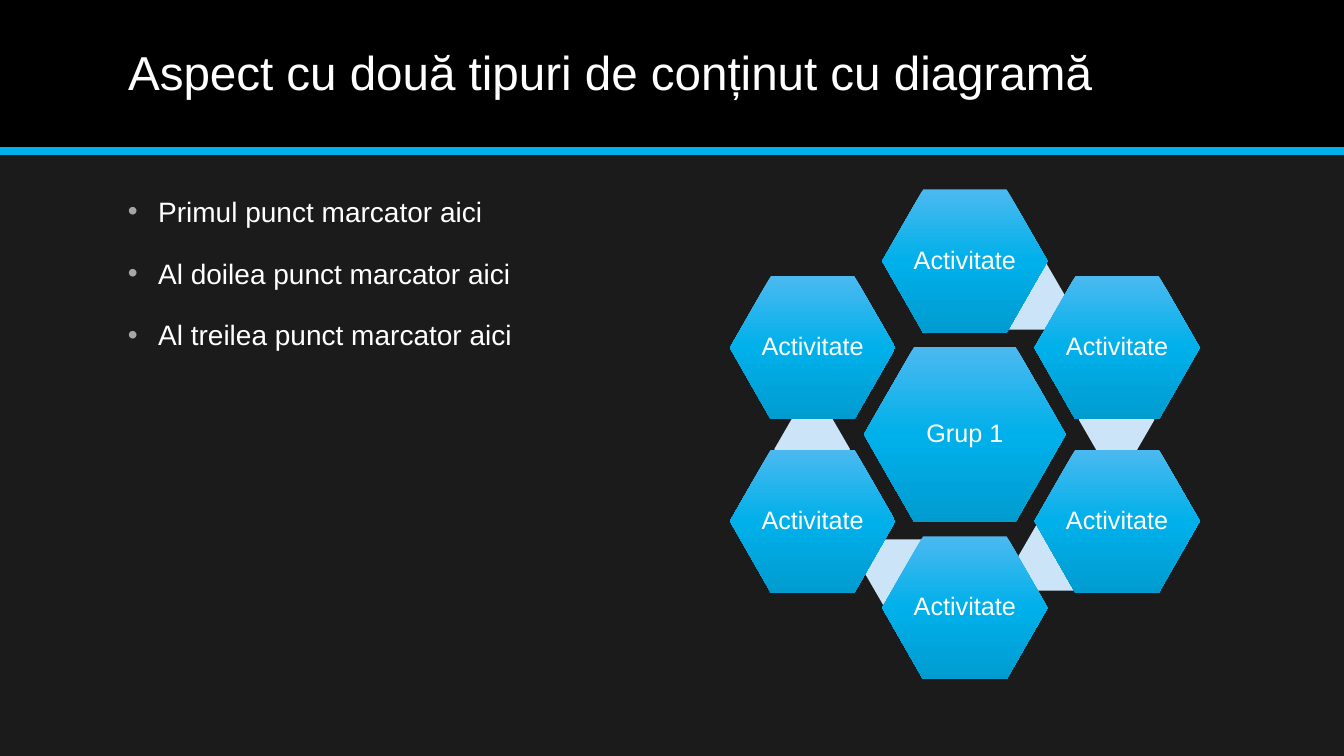
from copy import deepcopy

from lxml import etree
from pptx import Presentation
from pptx.dml.color import RGBColor
from pptx.enum.shapes import MSO_CONNECTOR, MSO_SHAPE
from pptx.enum.text import MSO_ANCHOR, PP_ALIGN
from pptx.oxml.ns import qn
from pptx.util import Inches, Pt

RECT, HEXAGON = MSO_SHAPE.RECTANGLE, MSO_SHAPE.HEXAGON
STRAIGHT = MSO_CONNECTOR.STRAIGHT
MIDDLE, LEFT, CENTER = MSO_ANCHOR.MIDDLE, PP_ALIGN.LEFT, PP_ALIGN.CENTER

FONT = "Arial"
COLORS = {
    "back": "1B1B1B", "band": "000000", "rule": "00B0EA", "text": "FFFFFF",
    "bullet": "A6A6A6", "link": "CCE4F7",
    "top": "4BB9F0", "mid": "00B0EA", "low": "009CD0",
}
WIDTH, BAND = 13.33, 1.5
POINTS = ["Primul punct marcator aici", "Al doilea punct marcator aici",
          "Al treilea punct marcator aici"]

HUB_X, HUB_Y = 9.57, 4.31
STEP_X, STEP_Y = 1.51, 0.86
# Column and row steps from the hub, then the link's left and top
RING = [
    (0, -2, (9.82, 2.62)),
    (1, -1, (10.7, 3.84)),
    (1, 1, (10.09, 5.21)),
    (0, 2, (8.57, 5.35)),
    (-1, 1, (7.68, 4.13)),
    (-1, -1, None),
]


def color(name):
    return RGBColor.from_string(COLORS[name])


def style(para, size):
    para.font.name = FONT
    para.font.size = Pt(size)
    para.font.color.rgb = color("text")


def add_shape(slide, kind, x, y, w, h):
    """Add a shape with no line and no shadow."""
    shape = slide.shapes.add_shape(kind, Inches(x), Inches(y), Inches(w), Inches(h))
    shape.shadow.inherit = False
    shape.line.fill.background()
    return shape


def fill_solid(shape, name):
    shape.fill.solid()
    shape.fill.fore_color.rgb = color(name)


def fill_blend(shape):
    """Fill with three stops from top to bottom."""
    shape.fill.gradient()
    shape.fill.gradient_angle = 270
    stops = shape.element.spPr.find(".//" + qn("a:gsLst"))
    stops.append(deepcopy(stops[-1]))
    for stop, name, place in zip(shape.fill.gradient_stops, ("top", "mid", "low"), (0, 0.5, 1)):
        stop.color.rgb = color(name)
        stop.position = place


def add_band(slide):
    fill_solid(add_shape(slide, RECT, 0, 0, WIDTH, BAND), "band")
    rule = slide.shapes.add_connector(STRAIGHT, 0, Inches(BAND), Inches(WIDTH), Inches(BAND))
    rule.line.color.rgb = color("rule")
    rule.line.width = Pt(6)
    etree.SubElement(rule.element.spPr, qn("a:effectLst"))


def set_title(slide, text):
    title = slide.shapes.title
    slide.shapes.element.append(title.element)  # in front of the band
    title.left, title.top = Inches(1.17), Inches(0.14)
    title.width, title.height = Inches(11), Inches(1.2)
    frame = title.text_frame
    frame.text = text
    frame.vertical_anchor = MIDDLE
    para = frame.paragraphs[0]
    para.alignment = LEFT
    para.line_spacing = 0.9
    style(para, 34)


def add_bullet(para):
    props = para._p.get_or_add_pPr()
    props.set("marL", str(Inches(0.3)))
    props.set("indent", str(-Inches(0.3)))
    tint = etree.SubElement(props, qn("a:buClr"))
    etree.SubElement(tint, qn("a:srgbClr"), val=COLORS["bullet"])
    etree.SubElement(props, qn("a:buFont"), typeface=FONT)
    etree.SubElement(props, qn("a:buChar"), char="•")


def add_list(slide, points):
    box = slide.shapes.add_textbox(Inches(1.17), Inches(1.88), Inches(5.2), Inches(4.88))
    frame = box.text_frame
    frame.word_wrap = True
    for i, text in enumerate(points):
        para = frame.add_paragraph() if i else frame.paragraphs[0]
        para.text = text
        add_bullet(para)
        if i:
            para.space_before = Pt(20)
        style(para, 20)


def add_cell(slide, text, x, y, w, h):
    """Add a labelled hexagon centred on x, y."""
    cell = add_shape(slide, HEXAGON, x - w / 2, y - h / 2, w, h)
    cell.adjustments[0] = 0.286
    fill_blend(cell)
    frame = cell.text_frame
    frame.word_wrap = False
    frame.vertical_anchor = MIDDLE
    frame.margin_left = frame.margin_right = Inches(0.03)
    frame.margin_top = frame.margin_bottom = Inches(0.03)
    frame.text = text
    para = frame.paragraphs[0]
    para.alignment = CENTER
    para.line_spacing = 0.9
    style(para, 18)


def add_link(slide, x, y):
    link = add_shape(slide, HEXAGON, x, y, 0.75, 0.65)
    link.adjustments[0] = 0.289
    fill_solid(link, "link")


def add_ring(slide):
    add_cell(slide, "Grup 1", HUB_X, HUB_Y, 2, 1.73)
    for col, row, link in RING:
        if link:
            add_link(slide, *link)
        add_cell(slide, "Activitate", HUB_X + col * STEP_X, HUB_Y + row * STEP_Y, 1.64, 1.42)


def main():
    deck = Presentation()
    deck.slide_width, deck.slide_height = Inches(WIDTH), Inches(7.5)
    slide = deck.slides.add_slide(deck.slide_layouts[5])
    slide.background.fill.solid()
    slide.background.fill.fore_color.rgb = color("back")
    add_band(slide)
    set_title(slide, "Aspect cu două tipuri de conținut cu diagramă")
    add_list(slide, POINTS)
    add_ring(slide)
    deck.save("out.pptx")


if __name__ == "__main__":
    main()
